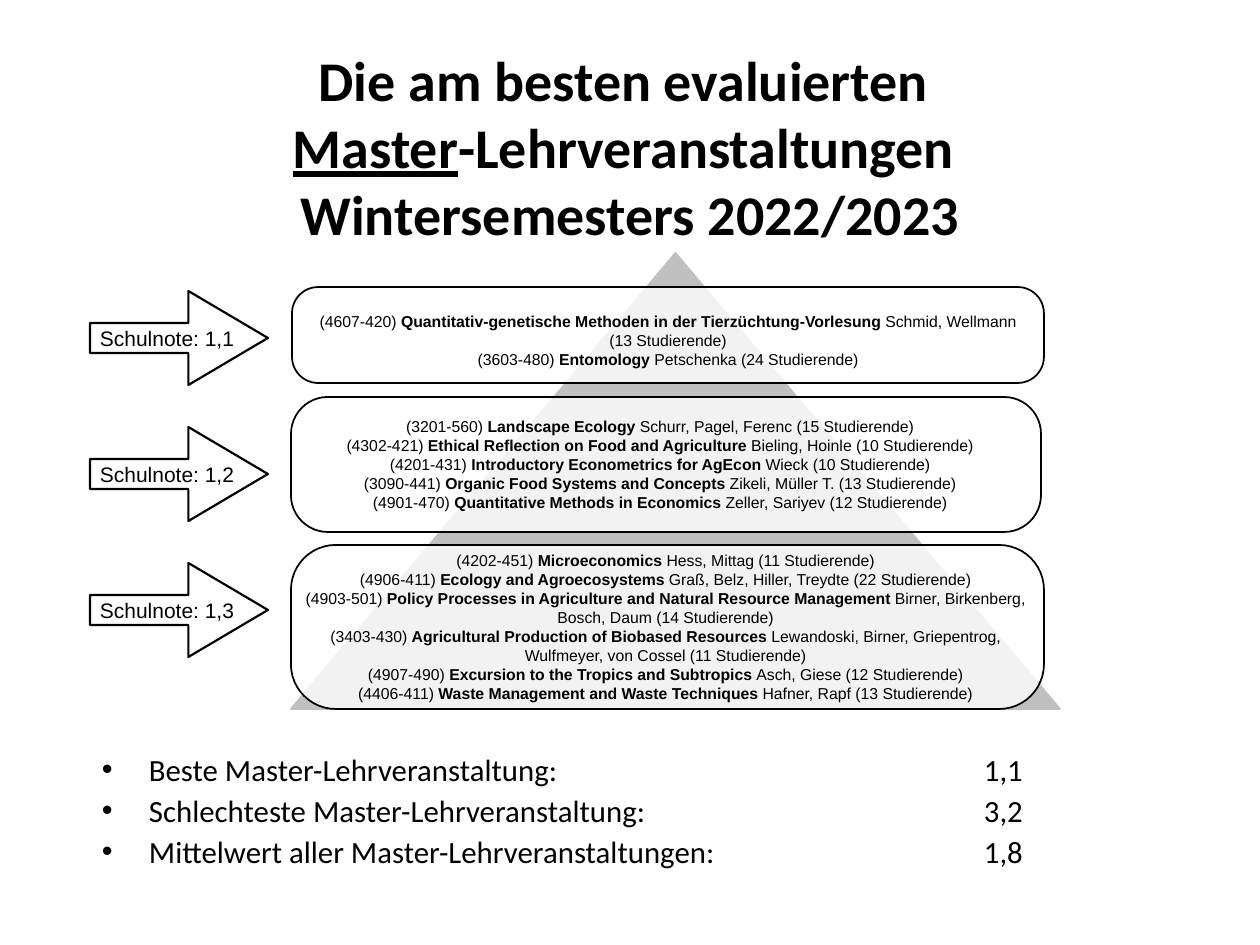
from lxml import etree
from pptx import Presentation
from pptx import util as u
from pptx.dml.color import RGBColor
from pptx.enum import shapes, text
from pptx.oxml.ns import qn

PX = u.Inches(1) / 126
BLACK, WHITE, GREY = "000000", "FFFFFF", "C0C0C0"

# Grade, panel box, text offset and courses: (code, name, lecturers)
GRADES = [
    ("1,1", (292, 287, 752, 96), (0, 5), [
        ("4607-420", "Quantitativ-genetische Methoden in der Tierzüchtung-Vorlesung",
         "Schmid, Wellmann\n(13 Studierende)"),
        ("3603-480", "Entomology", "Petschenka (24 Studierende)"),
    ]),
    ("1,2", (291, 397, 750, 135), (-6, 0), [
        ("3201-560", "Landscape Ecology", "Schurr, Pagel, Ferenc (15 Studierende)"),
        ("4302-421", "Ethical Reflection on Food and Agriculture",
         "Bieling, Hoinle (10 Studierende)"),
        ("4201-431", "Introductory Econometrics for AgEcon", "Wieck (10 Studierende)"),
        ("3090-441", "Organic Food Systems and Concepts",
         "Zikeli, Müller T. (13 Studierende)"),
        ("4901-470", "Quantitative Methods in Economics",
         "Zeller, Sariyev (12 Studierende)"),
    ]),
    ("1,3", (291, 545, 753, 164), (-2, 0), [
        ("4202-451", "Microeconomics", "Hess, Mittag (11 Studierende)"),
        ("4906-411", "Ecology and Agroecosystems",
         "Graß, Belz, Hiller, Treydte (22 Studierende)"),
        ("4903-501", "Policy Processes in Agriculture and Natural Resource Management",
         "Birner, Birkenberg, Bosch, Daum (14 Studierende)"),
        ("3403-430", "Agricultural Production of Biobased Resources",
         "Lewandoski, Birner, Griepentrog, Wulfmeyer, von Cossel (11 Studierende)"),
        ("4907-490", "Excursion to the Tropics and Subtropics",
         "Asch, Giese (12 Studierende)"),
        ("4406-411", "Waste Management and Waste Techniques",
         "Hafner, Rapf (13 Studierende)"),
    ]),
]

SUMMARY = [
    ("Beste Master-Lehrveranstaltung:", "1,1"),
    ("Schlechteste Master-Lehrveranstaltung:", "3,2"),
    ("Mittelwert aller Master-Lehrveranstaltungen:", "1,8"),
]


def px(n):
    return u.Emu(round(n * PX))


def color(hex_code):
    return RGBColor.from_string(hex_code)


def set_font(paragraph, name, size, bold=None):
    font = paragraph.font
    font.name, font.size, font.bold = name, u.Pt(size), bold
    font.color.rgb = color(BLACK)


def add_lines(paragraph, content):
    """Add runs, with a line break at each newline; return the last run."""
    for i, line in enumerate(content.split("\n")):
        if i:
            paragraph.add_line_break()
        run = paragraph.add_run()
        run.text = line
    return run


def add_text_frame(slide, box, anchor, margins=(0, 0)):
    frame = slide.shapes.add_textbox(*map(px, box)).text_frame
    frame.word_wrap = True
    frame.vertical_anchor = anchor
    frame.margin_left = frame.margin_right = px(margins[0])
    frame.margin_top = frame.margin_bottom = px(margins[1])
    return frame


def add_paragraphs(frame, count):
    return [frame.paragraphs[0]] + [frame.add_paragraph() for _ in range(count - 1)]


def add_figure(slide, kind, box, fill, line, width, adjustments, opacity=None):
    figure = slide.shapes.add_shape(kind, *map(px, box))
    figure.shadow.inherit = False
    figure.fill.solid()
    figure.fill.fore_color.rgb = color(fill)
    figure.line.color.rgb = color(line)
    figure.line.width = u.Pt(width)
    for i, value in enumerate(adjustments):
        figure.adjustments[i] = value
    if opacity:
        fill_color = figure.fill._xPr.find(qn("a:solidFill"))[0]
        etree.SubElement(fill_color, qn("a:alpha"), val=str(opacity * 1000))
    return figure


def add_title(slide, box):
    frame = add_text_frame(slide, box, text.MSO_ANCHOR.MIDDLE, (13, 6))
    title = frame.paragraphs[0]
    title.alignment = text.PP_ALIGN.CENTER
    set_font(title, "Calibri", 32, True)
    add_lines(title, "Die am besten evaluierten \n")
    add_lines(title, "Master").font.underline = True
    add_lines(title, "-Lehrveranstaltungen \nWintersemesters 2022/2023")


def add_grade_arrow(slide, box, grade):
    arrow = add_figure(slide, shapes.MSO_SHAPE.RIGHT_ARROW, box,
                       WHITE, BLACK, 1.25, (0.32, 0.846))
    frame = arrow.text_frame
    frame.word_wrap = False
    frame.vertical_anchor = text.MSO_ANCHOR.MIDDLE
    frame.margin_left = px(10)
    frame.margin_right = frame.margin_top = frame.margin_bottom = 0
    label = frame.paragraphs[0]
    label.alignment = text.PP_ALIGN.LEFT
    set_font(label, "Arial", 12)
    add_lines(label, f"Schulnote: {grade}")


def add_course_panel(slide, box, offset, courses):
    add_figure(slide, shapes.MSO_SHAPE.ROUNDED_RECTANGLE, box,
               WHITE, BLACK, 1, (0.273,), opacity=80)
    left, top, width, height = box
    text_box = (left + offset[0], top + offset[1], width, height)
    frame = add_text_frame(slide, text_box, text.MSO_ANCHOR.MIDDLE)
    for course, (code, name, lecturers) in zip(add_paragraphs(frame, len(courses)), courses):
        course.alignment = text.PP_ALIGN.CENTER
        set_font(course, "Arial", 9)
        add_lines(course, f"({code}) ")
        add_lines(course, f"{name} ").font.bold = True
        add_lines(course, lecturers)


def add_summary(slide, box, rows):
    frame = add_text_frame(slide, box, text.MSO_ANCHOR.TOP, (13, 6))
    for i, (entry, (label, value)) in enumerate(zip(add_paragraphs(frame, len(rows)), rows)):
        entry.line_spacing = 0.8
        entry.space_before = u.Pt(6.4 if i else 0)
        # Hanging bullet, and a tab stop for the value column
        properties = entry._p.get_or_add_pPr()
        properties.set("marL", str(px(47)))
        properties.set("indent", str(-px(47)))
        etree.SubElement(properties, qn("a:buFont"), typeface="Arial")
        etree.SubElement(properties, qn("a:buChar"), char="•")
        tabs = etree.SubElement(properties, qn("a:tabLst"))
        etree.SubElement(tabs, qn("a:tab"), pos=str(px(882)), algn="l")
        set_font(entry, "Calibri", 17.6)
        add_lines(entry, f"{label}\t{value}")


def main():
    deck = Presentation()
    deck.slide_width, deck.slide_height = px(1260), px(945)
    slide = deck.slides.add_slide(deck.slide_layouts[6])

    add_title(slide, (63, 67, 1134, 158))
    # Pyramid behind the course panels
    add_figure(slide, shapes.MSO_SHAPE.ISOSCELES_TRIANGLE, (291, 253, 769, 456),
               GREY, GREY, 1, (0.5,))
    for i, (grade, box, offset, courses) in enumerate(GRADES):
        add_grade_arrow(slide, (90, 291 + 136 * i, 178, 94), grade)
        add_course_panel(slide, box, offset, courses)
    add_summary(slide, (89, 752, 1108, 134), SUMMARY)

    deck.save("out.pptx")


if __name__ == "__main__":
    main()
